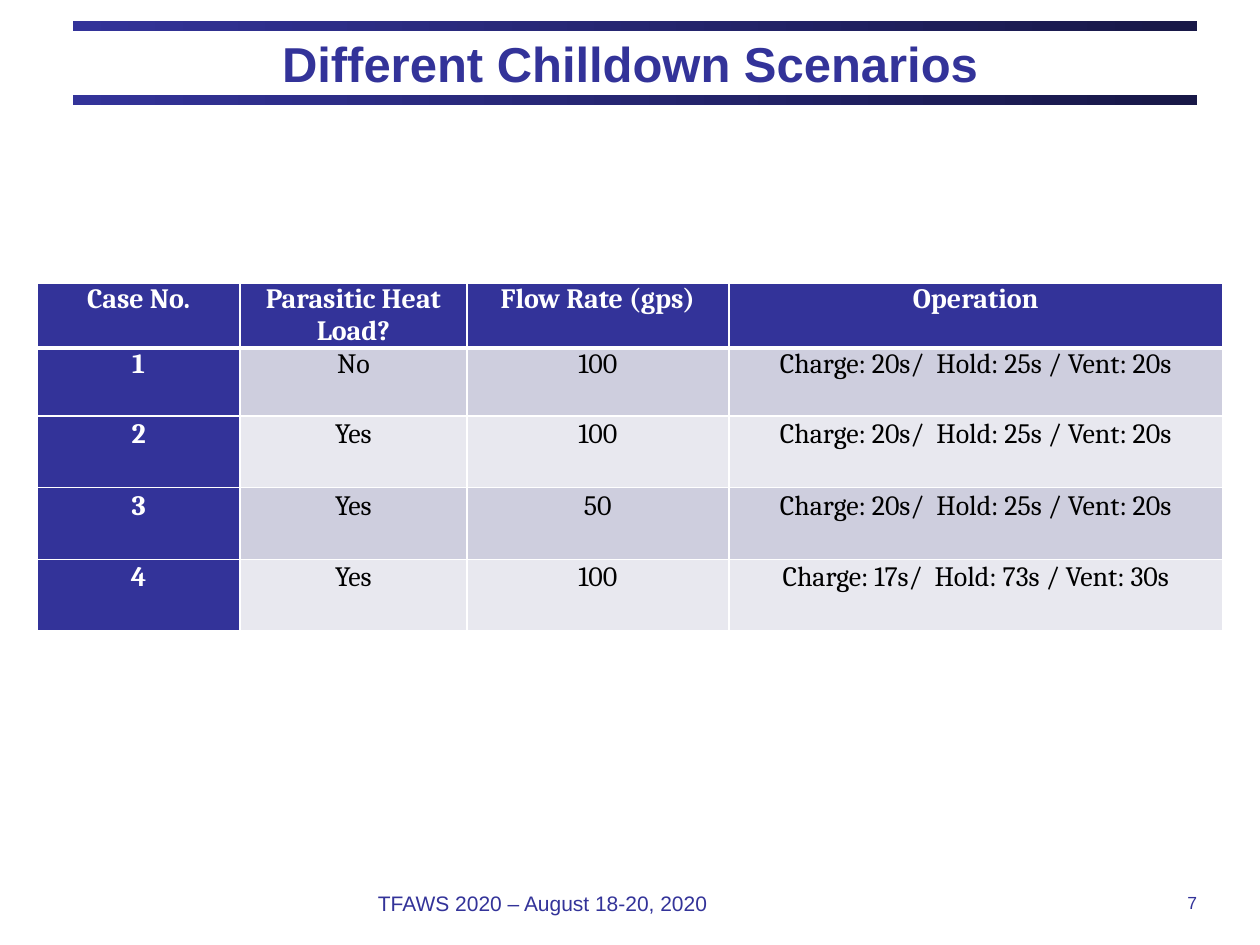
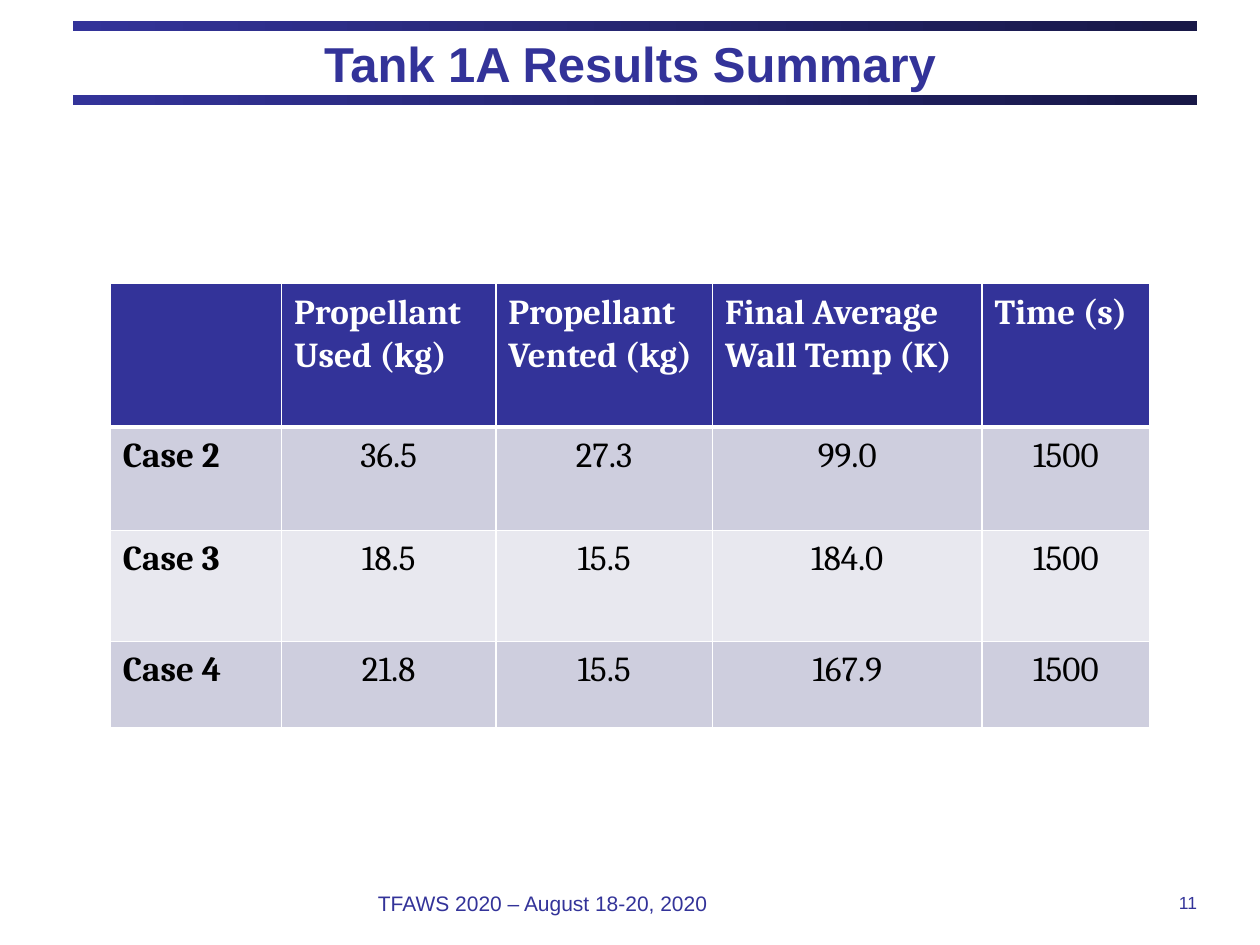
"""Build two slides that share a title band and footer, each holding one table."""
from lxml.etree import SubElement
from pptx import Presentation
from pptx.dml.color import RGBColor
from pptx.enum.shapes import MSO_SHAPE
from pptx.enum.text import MSO_ANCHOR, MSO_AUTO_SIZE, PP_ALIGN as AL
from pptx.oxml.ns import qn
from pptx.util import Inches, Pt

W, H = 10, 7.5
NAVY, DARK, WHITE, BLACK = "333399", "181847", "FFFFFF", "000000"
STRIPES = ("CECEDE", "E8E8EF")
HEAD_FONT, TABLE_FONT = "Arial", "Cambria"
FOOTER = "TFAWS 2020 – August 18-20, 2020"
BAND_TOPS = (0.17, 0.75)

SLIDES = [
    dict(title="Different Chilldown Scenarios", number="7",
         cols=(1.61, 1.8, 2.08, 3.92), rows=(0.51, 0.54, 0.57, 0.57, 0.57),
         size=16, margins=(0.07, 0), head_align=AL.CENTER, after=0,
         first_col=(NAVY, WHITE), spacing=(1, 1, 1.07, 1.07, 1.07),
         cells=[
             ("Case No.", "Parasitic Heat Load?", "Flow Rate (gps)", "Operation"),
             ("1", "No", "100", "Charge: 20s/  Hold: 25s / Vent: 20s"),
             ("2", "Yes", "100", "Charge: 20s/  Hold: 25s / Vent: 20s"),
             ("3", "Yes", "50", "Charge: 20s/  Hold: 25s / Vent: 20s"),
             ("4", "Yes", "100", "Charge: 17s/  Hold: 73s / Vent: 30s"),
         ]),
    dict(title="Tank 1A Results Summary", number="11",
         cols=(1.36, 1.7, 1.72, 2.14, 1.33), rows=(1.14, 0.82, 0.88, 0.69),
         size=20, margins=(0.1, 0.05), head_align=AL.LEFT, after=8,
         first_col=(None, BLACK), spacing=(1.07,) * 4,
         cells=[
             ("", "Propellant Used (kg)", "Propellant Vented (kg)",
              "Final Average Wall Temp (K)", "Time (s)"),
             ("Case 2", "36.5", "27.3", "99.0", "1500"),
             ("Case 3", "18.5", "15.5", "184.0", "1500"),
             ("Case 4", "21.8", "15.5", "167.9", "1500"),
         ]),
]


def rgb(value):
    return RGBColor.from_string(value)


def style(p, name, size, color, bold=False, align=AL.LEFT):
    p.alignment = align
    for r in p.runs:
        r.font.name, r.font.size, r.font.bold = name, Pt(size), bold
        r.font.color.rgb = rgb(color)


def set_frame(tf, text, size, align, bold=False, side=0):
    tf.text = text
    tf.word_wrap, tf.auto_size = True, MSO_AUTO_SIZE.NONE
    tf.vertical_anchor = MSO_ANCHOR.MIDDLE
    tf.margin_left = tf.margin_right = Inches(side)
    tf.margin_top = tf.margin_bottom = 0
    style(tf.paragraphs[0], HEAD_FONT, size, NAVY, bold, align)


def add_frame(s, title, number):
    for top in BAND_TOPS:
        band = s.shapes.add_shape(MSO_SHAPE.RECTANGLE, Inches(0.58), Inches(top),
                                  Inches(8.92), Inches(0.08))
        band.shadow.inherit = False
        band.line.fill.background()
        band.fill.gradient()
        band.fill.gradient_angle = 0
        for stop, color in zip(band.fill.gradient_stops, (NAVY, DARK)):
            stop.color.rgb = rgb(color)
    sp = s.shapes.title
    sp.left, sp.top, sp.width, sp.height = map(Inches, (0.5, 0.21, 9, 0.58))
    set_frame(sp.text_frame, title, 28, AL.CENTER, True, 0.1)
    for text, left, width, size, align in ((FOOTER, 3, 4, 12, AL.LEFT),
                                           (number, 7.42, 2.08, 10, AL.RIGHT)):
        box = s.shapes.add_textbox(Inches(left), Inches(7), Inches(width), Inches(0.33))
        set_frame(box.text_frame, text, size, align)


def set_borders(cell, top, bottom):
    tcPr = cell._tc.get_or_add_tcPr()
    for side, width in (("L", 1), ("R", 1), ("T", top), ("B", bottom)):
        ln = SubElement(tcPr, qn(f"a:ln{side}"), w=str(Pt(width)))
        SubElement(SubElement(ln, qn("a:solidFill")), qn("a:srgbClr"), val=WHITE)


def add_grid(s, d):
    cols, rows = d["cols"], d["rows"]
    width = sum(cols)
    table = s.shapes.add_table(len(rows), len(cols), Inches((W - width) / 2), Inches(0.3 * H),
                               Inches(width), Inches(sum(rows))).table
    for col, size in zip(table.columns, cols):
        col.width = Inches(size)
    for row, size in zip(table.rows, rows):
        row.height = Inches(size)
    for i, texts in enumerate(d["cells"]):
        for j, text in enumerate(texts):
            cell = table.cell(i, j)
            fill, color = STRIPES[(i - 1) % 2], BLACK
            if i == 0:
                fill, color = NAVY, WHITE
            elif j == 0:
                fill, color = d["first_col"][0] or fill, d["first_col"][1]
            set_borders(cell, 3 if i == 1 else 1, 3 if i == 0 else 1)
            cell.fill.solid()
            cell.fill.fore_color.rgb = rgb(fill)
            side, edge = map(Inches, d["margins"])
            cell.margin_left = cell.margin_right = side
            cell.margin_top = cell.margin_bottom = edge
            heading = i == 0 or j == 0
            p = cell.text_frame.paragraphs[0]
            p.text = text
            p.line_spacing = d["spacing"][i]
            p.space_after = Pt(d["after"] if heading else 0)
            style(p, TABLE_FONT, d["size"], color, heading,
                  d["head_align"] if heading else AL.CENTER)


def main():
    prs = Presentation()
    prs.slide_width, prs.slide_height = Inches(W), Inches(H)
    for d in SLIDES:
        s = prs.slides.add_slide(prs.slide_layouts[5])
        add_frame(s, d["title"], d["number"])
        add_grid(s, d)
    prs.save("out.pptx")


if __name__ == "__main__":
    main()
